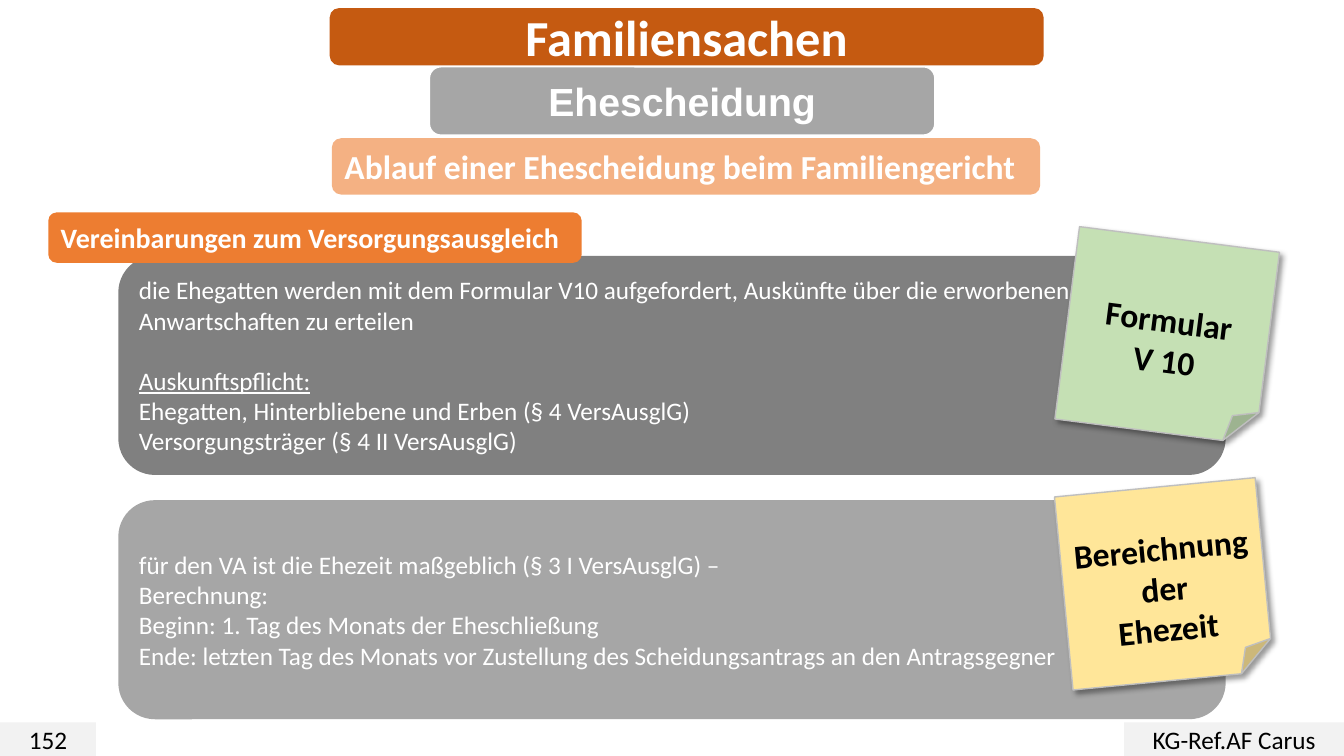
from lxml import etree
from pptx import Presentation
from pptx.dml.color import RGBColor
from pptx.enum.shapes import MSO_SHAPE
from pptx.enum.text import MSO_ANCHOR, PP_ALIGN
from pptx.oxml.ns import qn
from pptx.util import Pt

ROUNDED = MSO_SHAPE.ROUNDED_RECTANGLE
RECTANGLE = MSO_SHAPE.RECTANGLE
NOTE = MSO_SHAPE.FOLDED_CORNER
MIDDLE = MSO_ANCHOR.MIDDLE
LEFT = PP_ALIGN.LEFT
CENTER = PP_ALIGN.CENTER
WHITE = "FFFFFF"
BLACK = "000000"


def color(value):
    return RGBColor.from_string(value)


def add_box(page, kind, place, fill, lines, size, ink=WHITE, bold=False,
            align=LEFT, font="Calibri", outline=None):
    box = page.shapes.add_shape(kind, *[Pt(length) for length in place])
    box.shadow.inherit = False
    box.fill.solid()
    box.fill.fore_color.rgb = color(fill)
    if outline:
        box.line.color.rgb = color(outline)
        box.line.width = Pt(1)
    else:
        box.line.fill.background()
    frame = box.text_frame
    frame.word_wrap = True
    frame.vertical_anchor = MIDDLE
    frame.text = "\n".join(lines)
    for para in frame.paragraphs:
        para.alignment = align
        for span in para.runs:
            span.font.name = font
            span.font.size = Pt(size)
            span.font.bold = bold
            span.font.color.rgb = color(ink)
    return box


def add_banner(page, place, fill, text, size, **style):
    return add_box(page, ROUNDED, place, fill, [text], size, bold=True, **style)


def add_panel(page, top, fill, lines):
    return add_box(page, ROUNDED, (84.5, top, 791, 156.5), fill, lines, 18)


def add_footer(page, left, width, text):
    add_box(page, RECTANGLE, (left, 516, width, 24), "F2F2F2", [text], 18,
            ink=BLACK, align=CENTER)


def add_drop_shadow(box):
    effects = box._element.spPr.find(qn("a:effectLst"))
    shadow = etree.SubElement(effects, qn("a:outerShdw"), blurRad=str(Pt(4)),
                              dist=str(Pt(3)), dir=str(45 * 60000), algn="tl",
                              rotWithShape="0")
    tint = etree.SubElement(shadow, qn("a:srgbClr"), val=BLACK)
    etree.SubElement(tint, qn("a:alpha"), val="40000")


def add_note(page, left, top, angle, fill, lines):
    note = add_box(page, NOTE, (left, top, 144, 138.5), fill, lines, 24,
                   ink=BLACK, bold=True, align=CENTER, outline="BFBFBF")
    note.rotation = angle
    note.text_frame.margin_top = Pt(32.5)
    add_drop_shadow(note)


def main():
    deck = Presentation()
    deck.slide_width, deck.slide_height = Pt(960), Pt(540)
    page = deck.slides.add_slide(deck.slide_layouts[6])

    add_banner(page, (235.5, 5.75, 510, 41), "C55A11", "Familiensachen", 36,
               align=CENTER)
    add_footer(page, 0, 68.5, "152")
    add_footer(page, 803, 157, "KG-Ref.AF Carus")
    add_banner(page, (306.75, 47.75, 361, 48.75), "A6A6A6", "Ehescheidung", 28,
               align=CENTER, font="Arial", outline=WHITE)
    add_banner(page, (237, 98.75, 506, 40.25), "F4B183",
               "Ablauf einer Ehescheidung beim Familiengericht", 24)

    duty = add_panel(page, 182.75, "808080", [
        "die Ehegatten werden mit dem Formular V10 aufgefordert, "
        "Auskünfte über die erworbenen Anwartschaften zu erteilen",
        "Auskunftspflicht:",
        "Ehegatten, Hinterbliebene und Erben (§ 4 VersAusglG)",
        "Versorgungsträger (§ 4 II VersAusglG)",
    ])
    heading = duty.text_frame.paragraphs[1]
    heading.space_before = Pt(21.5)
    heading.runs[0].font.underline = True

    add_banner(page, (34.5, 151.75, 381, 36), "ED7D31",
               "Vereinbarungen zum Versorgungsausgleich", 20)
    add_panel(page, 357.25, "A6A6A6", [
        "für den VA ist die Ehezeit maßgeblich (§ 3 I VersAusglG) –",
        "Berechnung:",
        "Beginn: 1. Tag des Monats der Eheschließung",
        "Ende: letzten Tag des Monats vor Zustellung des "
        "Scheidungsantrags an den Antragsgegner",
    ])
    add_note(page, 761.75, 170.5, 7.3, "C5E0B4", ["Formular", "V 10"])
    add_note(page, 759.5, 347.75, 354.5, "FFE699",
             ["Bereichnung der", "Ehezeit"])
    deck.save("out.pptx")


if __name__ == "__main__":
    main()
